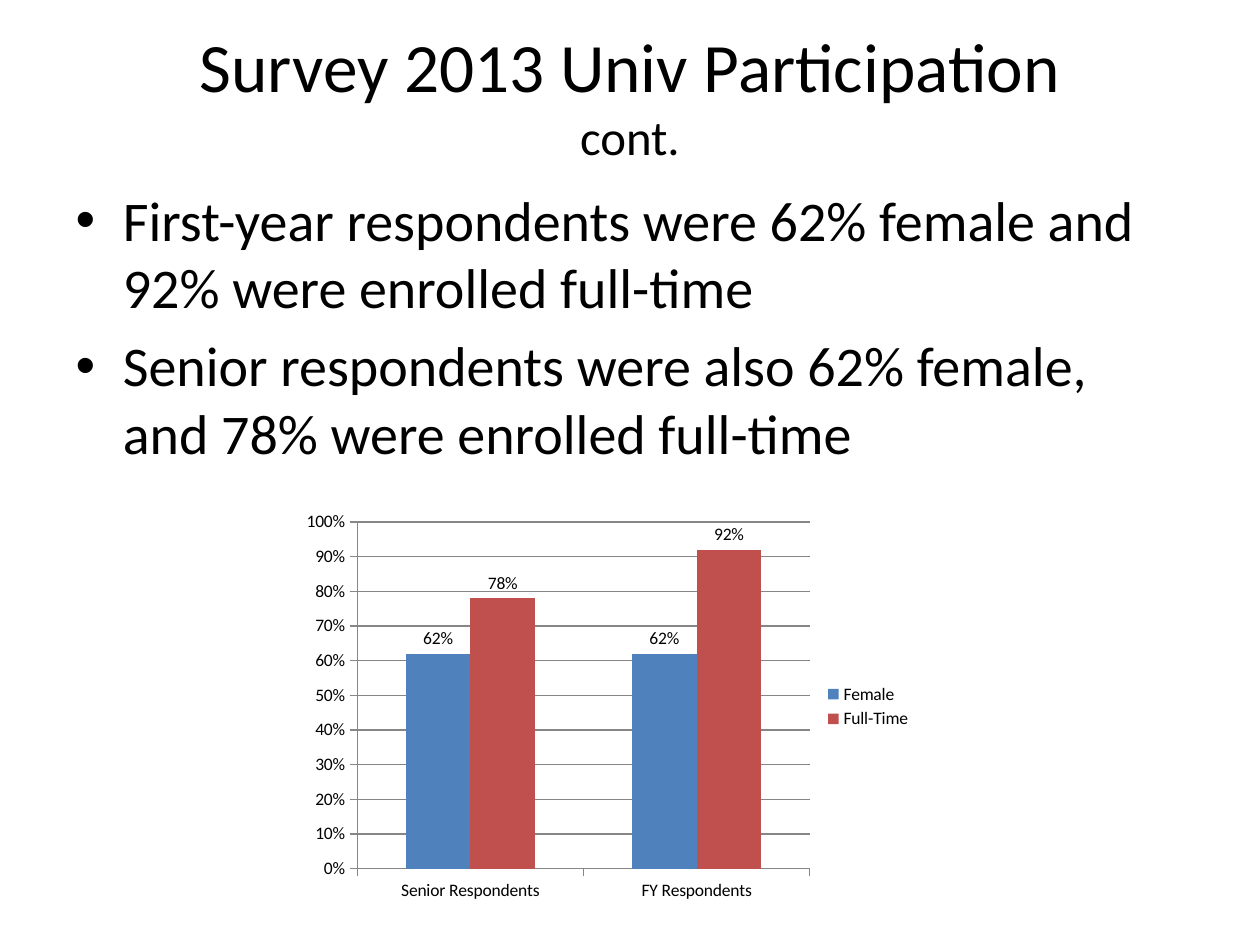
"""Build the survey participation slide with two bullets and a column chart."""
from pptx import Presentation
from pptx.chart.data import CategoryChartData
from pptx.dml.color import RGBColor
from pptx.enum.chart import XL_CHART_TYPE, XL_LABEL_POSITION, XL_LEGEND_POSITION, XL_TICK_MARK
from pptx.enum.text import MSO_ANCHOR, MSO_AUTO_SIZE, PP_ALIGN
from pptx.util import Pt

COLORS = {"text": "000000", "grid": "868686", "Female": "4F81BD", "Full-Time": "C0504D"}
FONT = "Calibri"
EMU_PER_PX = 914400 / 126


def px(*values):
    return [round(v * EMU_PER_PX) for v in values]


def style(font, size):
    font.name = FONT
    font.size = Pt(size)
    font.color.rgb = RGBColor.from_string(COLORS["text"])


prs = Presentation()
prs.slide_width, prs.slide_height = px(1260, 945)
s = prs.slides.add_slide(prs.slide_layouts[1])
title, body = s.shapes.title, s.placeholders[1]

title.left, title.top, title.width, title.height = px(63, 31, 1134, 126)
tf = title.text_frame
tf.auto_size = MSO_AUTO_SIZE.NONE
tf.vertical_anchor = MSO_ANCHOR.MIDDLE
p = tf.paragraphs[0]
p.alignment = PP_ALIGN.CENTER
r = p.add_run()
r.text = "Survey 2013 Univ Participation"
style(r.font, 39.6)
p.add_line_break()
r = p.add_run()
r.text = "cont."
style(r.font, 27.9)

body.left, body.top, body.width, body.height = px(63, 179, 1134, 725)
tf = body.text_frame
tf.auto_size = MSO_AUTO_SIZE.NONE
tf.text = "\n".join([
    "First-year respondents were 62% female and 92% were enrolled full-time",
    "Senior respondents were also 62% female, and 78% were enrolled full-time",
])
for p in tf.paragraphs:
    style(p.font, 32)

data = CategoryChartData(number_format="0%")
data.categories = ["Senior Respondents", "FY Respondents"]
data.add_series("Female", [0.62, 0.62])
data.add_series("Full-Time", [0.78, 0.92])
chart = s.shapes.add_chart(XL_CHART_TYPE.COLUMN_CLUSTERED, *px(294, 504, 630, 405), data).chart
chart.has_title = False
style(chart.font, 10)
chart.has_legend = True
chart.legend.position = XL_LEGEND_POSITION.RIGHT
chart.legend.include_in_layout = False

val_axis = chart.value_axis
val_axis.minimum_scale, val_axis.maximum_scale, val_axis.major_unit = 0, 1, 0.1
val_axis.has_major_gridlines = True
val_axis.tick_labels.number_format = "0%"
val_axis.tick_labels.number_format_is_linked = False
for axis in (chart.category_axis, val_axis):
    axis.major_tick_mark = XL_TICK_MARK.OUTSIDE
for line in (chart.category_axis.format.line, val_axis.format.line, val_axis.major_gridlines.format.line):
    line.color.rgb = RGBColor.from_string(COLORS["grid"])
    line.width = Pt(0.75)

plot = chart.plots[0]
plot.gap_width = 150
plot.overlap = 0
plot.vary_by_categories = False
for series in plot.series:
    series.format.fill.solid()
    series.format.fill.fore_color.rgb = RGBColor.from_string(COLORS[series.name])
    labels = series.data_labels
    labels.show_value = True
    labels.number_format = "0%"
    labels.number_format_is_linked = False
    labels.position = XL_LABEL_POSITION.OUTSIDE_END

prs.save("out.pptx")
